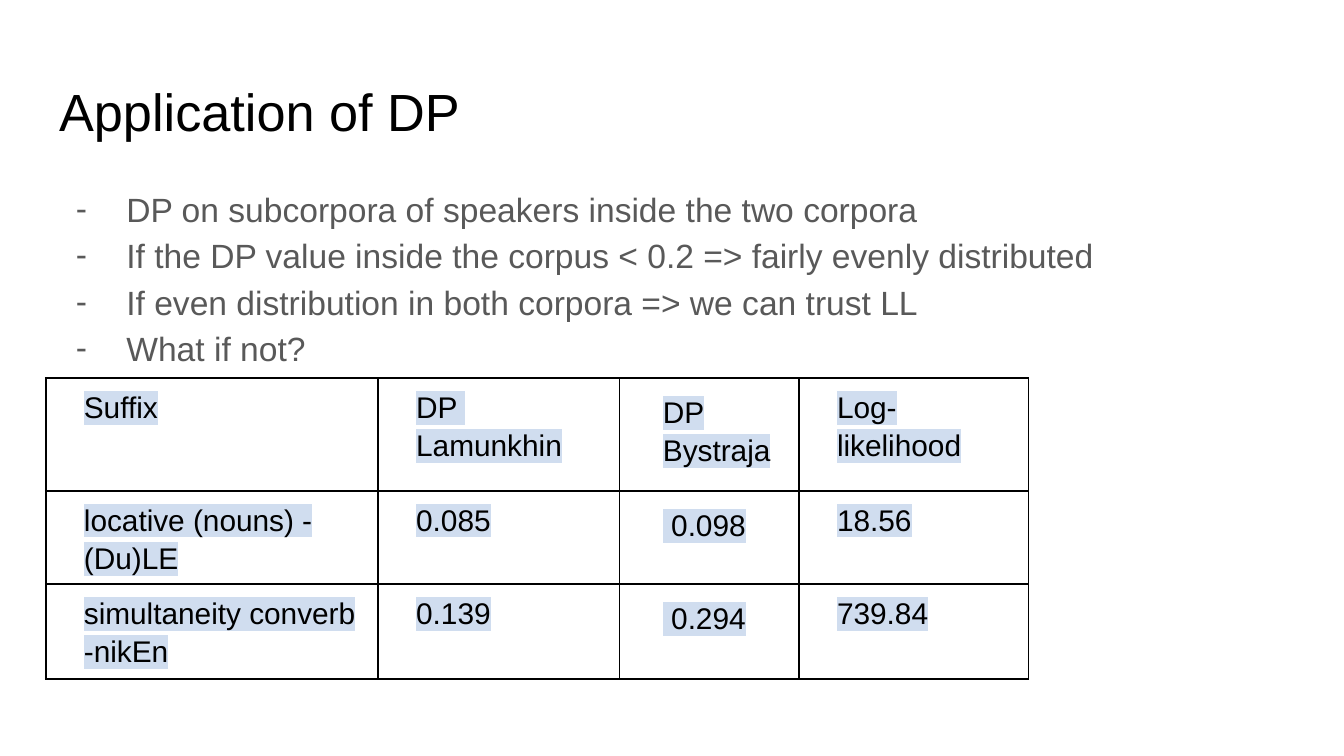
from lxml import etree
from pptx import Presentation
from pptx.dml.color import RGBColor
from pptx.enum import text
from pptx.oxml import ns
from pptx.util import Pt

TITLE = "Application of DP"
POINTS = [
    "DP on subcorpora of speakers inside the two corpora",
    "If the DP value inside the corpus < 0.2 => fairly evenly distributed",
    "If even distribution in both corpora => we can trust LL",
    "What if not?",
]
SUFFIXES = [
    ("Suffix", "DP \vLamunkhin", "DP Bystraja", "Log-likelihood"),
    ("locative (nouns) -(Du)LE", "0.085", " 0.098", "18.56"),
    ("simultaneity converb -nikEn", "0.139", " 0.294", "739.84"),
]
COLUMN_WIDTHS = [178, 129.5, 96, 123]
ROW_HEIGHTS = [60.5, 45.5, 51]
CELL_INSETS = [4.5, 4.5, 7.2, 4.5]
LEFT, WIDTH = 24.5, 671
BLACK, GREY, HIGHLIGHT = "000000", "595959", "D0DDEF"


def rgb(value):
    return RGBColor.from_string(value)


def assign(target, values):
    for name, value in values.items():
        setattr(target, name, value)


def add_xml(parent, tag, **attributes):
    return etree.SubElement(parent, ns.qn(tag), attributes)


def add_color(parent, tag, color):
    add_xml(add_xml(parent, tag), "a:srgbClr", val=color)


def margins(inset):
    sides = ("left", "top", "right", "bottom")
    return {f"margin_{side}": Pt(inset) for side in sides}


def style_text(frame, size, color, spacing):
    for paragraph in frame.paragraphs:
        assign(paragraph, {
            "alignment": text.PP_ALIGN.LEFT, "line_spacing": spacing,
            "space_before": Pt(0), "space_after": Pt(0),
        })
        for run in paragraph.runs:
            assign(run.font, {"name": "Arial", "size": Pt(size)})
            run.font.color.rgb = rgb(color)


def indent(paragraph, left, first=0):
    properties = paragraph._p.get_or_add_pPr()
    properties.set("marL", str(Pt(left)))
    properties.set("indent", str(Pt(first)))
    return properties


def place(holder, top, height, content, size, color, spacing):
    assign(holder, {"left": Pt(LEFT), "top": Pt(top),
                    "width": Pt(WIDTH), "height": Pt(height)})
    frame = holder.text_frame
    frame.text = content
    assign(frame, {
        **margins(7.2), "word_wrap": True,
        "auto_size": text.MSO_AUTO_SIZE.NONE,
        "vertical_anchor": text.MSO_ANCHOR.TOP,
    })
    style_text(frame, size, color, spacing)


def fill_cell(cell, content, inset):
    cell.text = content
    assign(cell, {**margins(inset), "vertical_anchor": text.MSO_ANCHOR.TOP})
    style_text(cell.text_frame, 16, BLACK, 1.15)
    for paragraph in cell.text_frame.paragraphs:
        indent(paragraph, 16)
        for run in paragraph.runs:
            highlight = etree.Element(ns.qn("a:highlight"))
            add_xml(highlight, "a:srgbClr", val=HIGHLIGHT)
            run._r.rPr.find(ns.qn("a:solidFill")).addnext(highlight)
    properties = cell._tc.get_or_add_tcPr()
    for side in ("a:lnL", "a:lnR", "a:lnT", "a:lnB"):
        border = add_xml(properties, side, w=str(Pt(1)))
        add_color(border, "a:solidFill", BLACK)
    cell.fill.background()


deck = Presentation()
assign(deck, {"slide_width": Pt(720), "slide_height": Pt(405)})
slide = deck.slides.add_slide(deck.slide_layouts[1])

place(slide.shapes.title, 35, 45, TITLE, 28, BLACK, 1.0)
body = slide.placeholders[1]
place(body, 90.75, 269, "\n".join(POINTS), 18, GREY, 1.15)
for point in body.text_frame.paragraphs:
    bullet = indent(point, 36, -27)
    add_color(bullet, "a:buClr", GREY)
    add_xml(bullet, "a:buFont", typeface="Arial")
    add_xml(bullet, "a:buChar", char="-")

table = slide.shapes.add_table(
    len(SUFFIXES), len(COLUMN_WIDTHS), Pt(LEFT), Pt(202.5),
    Pt(sum(COLUMN_WIDTHS)), Pt(sum(ROW_HEIGHTS))).table
assign(table, {"first_row": False, "horz_banding": False})
for column, width in zip(table.columns, COLUMN_WIDTHS):
    column.width = Pt(width)
for row, height, entries in zip(table.rows, ROW_HEIGHTS, SUFFIXES):
    row.height = Pt(height)
    for cell, entry, inset in zip(row.cells, entries, CELL_INSETS):
        fill_cell(cell, entry, inset)

deck.save("out.pptx")
